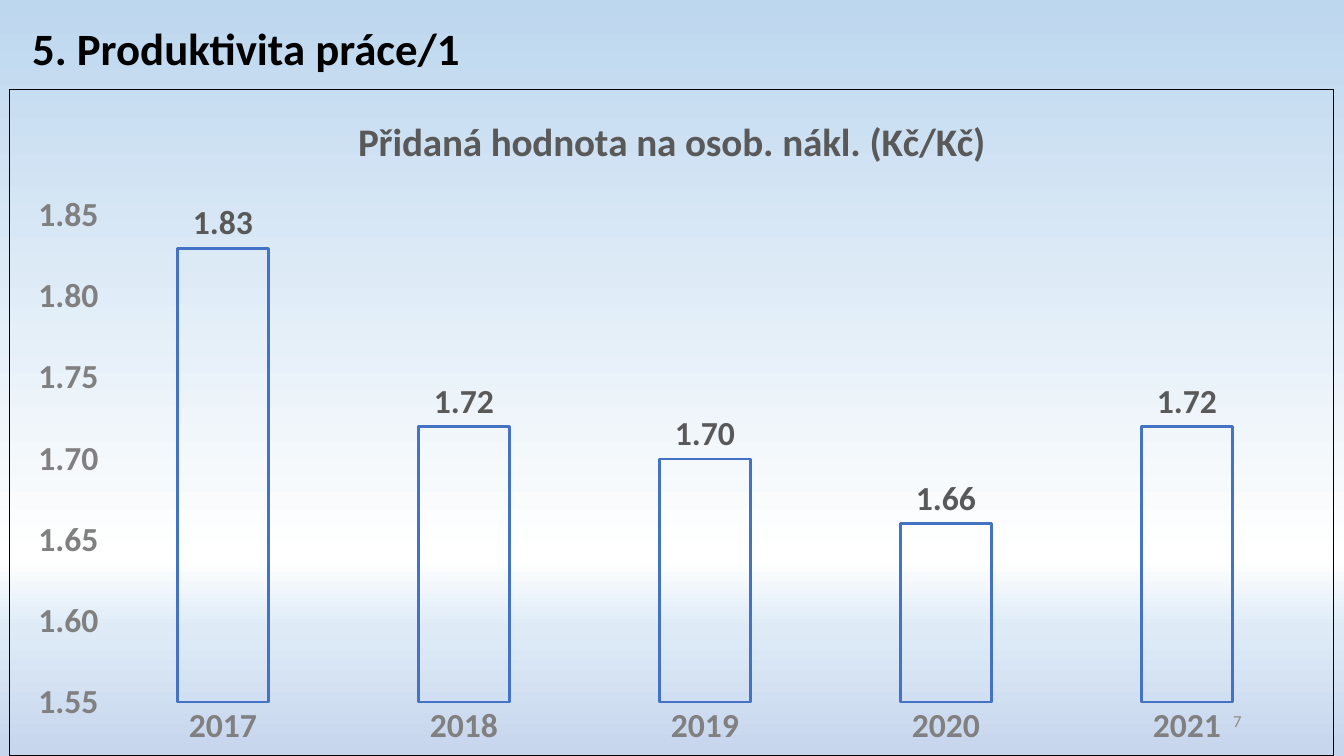
from lxml import etree
from pptx import Presentation
from pptx import chart as charts
from pptx.chart import data
from pptx.dml import color
from pptx.enum import chart as kinds, text
from pptx.oxml import parse_xml
from pptx.oxml.ns import nsdecls, qn
from pptx.util import Cm, Pt

FONT = "Calibri"
YEARS = ["2017", "2018", "2019", "2020", "2021"]
VALUE_ADDED = [1.83, 1.72, 1.70, 1.66, 1.72]
SKY = [(0, "BDD7EE"), (74, "FFFFFF"), (83, "DEEBF7"), (100, "C7D5ED")]
TWO_DECIMALS = "#,##0.00"


def rgb(value):
    """Turn a hex string into a colour."""
    return color.RGBColor.from_string(value)


def style(font, size, hue, bold=True):
    """Format a font."""
    font.name, font.size, font.bold = FONT, Pt(size), bold
    font.color.rgb = rgb(hue)


def paint_background(slide, stops):
    """Fill the slide with a vertical gradient."""
    fill = slide.background.fill
    fill.gradient()
    gradient = slide.background._cSld.find(".//" + qn("a:gradFill"))
    for child in list(gradient):
        gradient.remove(child)
    stop_list = etree.SubElement(gradient, qn("a:gsLst"))
    for percent, hue in stops:
        stop = etree.SubElement(stop_list, qn("a:gs"), pos=str(percent * 1000))
        etree.SubElement(stop, qn("a:srgbClr"), val=hue)
    etree.SubElement(gradient, qn("a:lin"), ang="5400000", scaled="0")


def add_label(slide, wording, place, size, hue, bold, align, wrap):
    """Add one line of text."""
    frame = slide.shapes.add_textbox(*map(Cm, place)).text_frame
    frame.text = wording
    frame.word_wrap = wrap
    frame.vertical_anchor = text.MSO_ANCHOR.MIDDLE
    line = frame.paragraphs[0]
    line.alignment = align
    style(line.runs[0].font, size, hue, bold)


def style_axis(axis):
    """Leave only the tick labels of an axis."""
    axis.has_major_gridlines = False
    axis.major_tick_mark = axis.minor_tick_mark = kinds.XL_TICK_MARK.NONE
    axis.format.line.fill.background()
    style(axis.tick_labels.font, 24, "808080")


def frame_chart(chart):
    """Give the chart a thin black frame and a fixed plot area."""
    frame = parse_xml(
        f'<c:spPr {nsdecls("c", "a")}><a:noFill/><a:ln w="{Pt(0.75)}"><a:solidFill>'
        '<a:srgbClr val="000000"/></a:solidFill></a:ln></c:spPr>')
    chart._chartSpace.find(qn("c:txPr")).addprevious(frame)
    plot_area = chart._chartSpace.chart.plotArea
    for layout in plot_area.findall(qn("c:layout")):
        plot_area.remove(layout)
    layout = etree.Element(qn("c:layout"))
    manual = etree.SubElement(layout, qn("c:manualLayout"))
    for tag, value in [("layoutTarget", "inner"), ("xMode", "edge"), ("yMode", "edge"),
                       ("x", "0.07"), ("y", "0.19"), ("w", "0.91"), ("h", "0.73")]:
        etree.SubElement(manual, qn("c:" + tag), val=value)
    plot_area.insert(0, layout)


def add_productivity_chart(slide, place):
    """Add the column chart of value added per personnel cost."""
    figures = data.CategoryChartData(number_format=TWO_DECIMALS)
    figures.categories = YEARS
    figures.add_series("Přidaná hodnota", VALUE_ADDED)
    chart = slide.shapes.add_chart(
        kinds.XL_CHART_TYPE.COLUMN_CLUSTERED, *map(Cm, place), figures).chart
    style(chart.font, 24, "000000")
    chart.has_legend = False
    chart.has_title = True
    heading = chart.chart_title.text_frame
    heading.text = "Přidaná hodnota na osob. nákl. (Kč/Kč)"
    style(heading.paragraphs[0].runs[0].font, 28, "595959")
    chart.chart_title.include_in_layout = False

    style_axis(chart.category_axis)
    costs = chart.value_axis
    style_axis(costs)
    costs.minimum_scale, costs.maximum_scale, costs.major_unit = 1.55, 1.85, 0.05
    costs.tick_labels.number_format = TWO_DECIMALS
    costs.tick_labels.number_format_is_linked = False

    plot = chart.plots[0]
    plot.gap_width, plot.overlap, plot.vary_by_categories = 164, -35, False
    columns = plot.series[0]
    columns.format.fill.background()
    columns.format.line.color.rgb = rgb("4472C4")
    columns.format.line.width = Pt(2)
    labels = columns.data_labels
    labels.show_value = True
    labels.position = kinds.XL_LABEL_POSITION.OUTSIDE_END
    labels.number_format = TWO_DECIMALS
    labels.number_format_is_linked = False
    style(labels.font, 24, "595959")
    frame_chart(chart)


def main():
    """Build the slide."""
    deck = Presentation()
    deck.slide_width, deck.slide_height = Cm(33.87), Cm(19.05)
    slide = deck.slides.add_slide(deck.slide_layouts[6])
    paint_background(slide, SKY)
    add_label(slide, "7", (23.92, 17.66, 7.62, 1.01), 12, "8C8C8C", False,
              text.PP_ALIGN.RIGHT, True)
    add_label(slide, "5. Produktivita práce/1", (0.56, 0.38, 11.4, 1.62), 32, "000000", True,
              text.PP_ALIGN.LEFT, False)
    add_productivity_chart(slide, (0.23, 2.24, 33.4, 16.81))
    deck.save("out.pptx")


if __name__ == "__main__":
    main()
